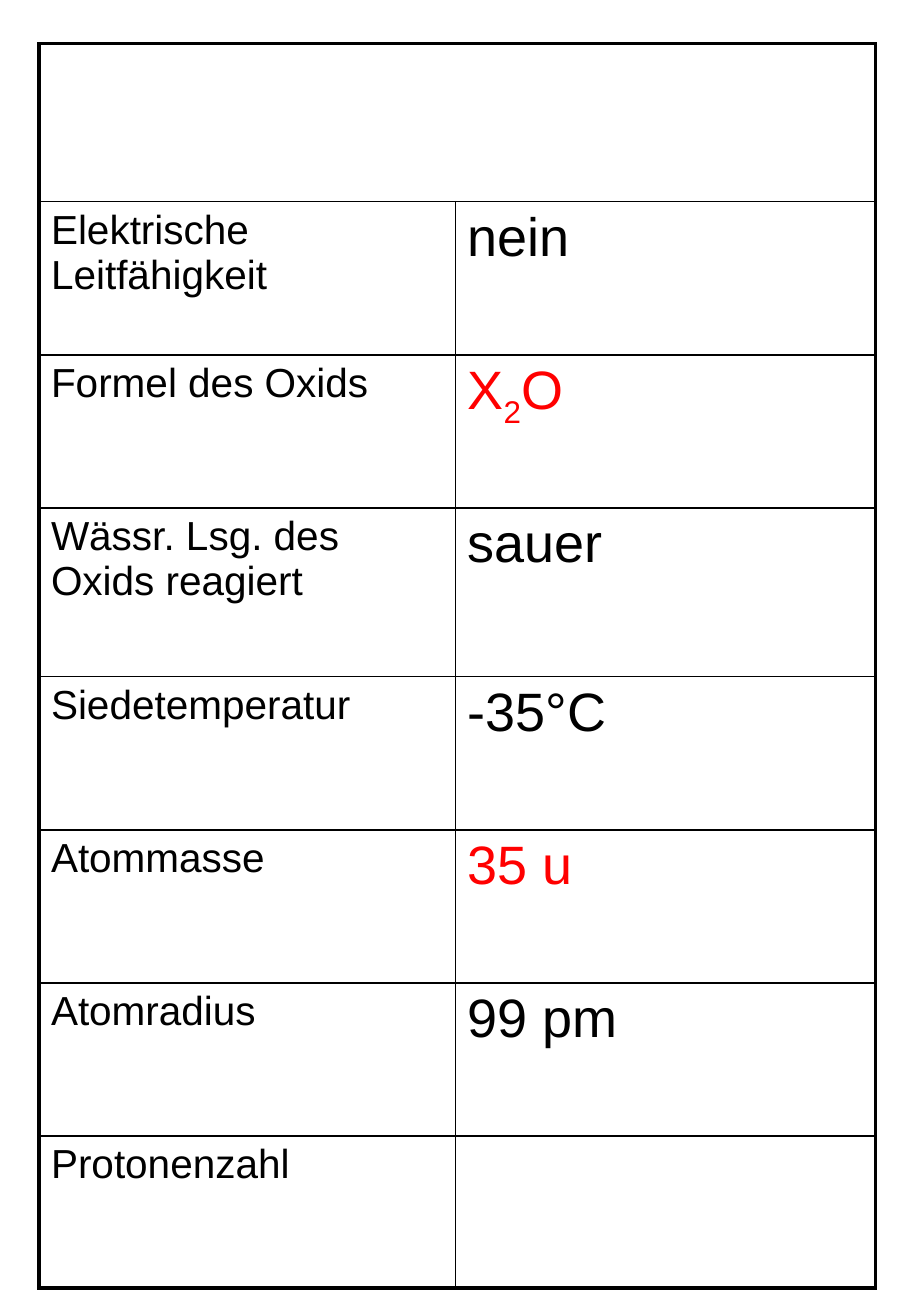
from dataclasses import dataclass

from lxml.etree import SubElement
from pptx import Presentation
from pptx.dml.color import RGBColor
from pptx.oxml.ns import qn
from pptx.util import Inches, Pt


@dataclass(frozen=True)
class Theme:
    font: str = "Arial"
    black: str = "000000"
    red: str = "FF0000"
    label_size: float = 24
    value_size: float = 32
    outer_line: float = 2.25
    inner_line: float = 1
    subscript: str = "-25000"


THEME = Theme()
COLUMN_WIDTHS = [3.43, 3.46]
ROW_HEIGHTS = [1.3, 1.26, 1.26, 1.39, 1.26, 1.26, 1.26, 1.25]
PROPERTIES = [
    ("Elektrische Leitfähigkeit", ["nein"], THEME.black),
    ("Formel des Oxids", ["X", "2", "O"], THEME.red),
    ("Wässr. Lsg. des Oxids reagiert", ["sauer"], THEME.black),
    ("Siedetemperatur", ["-35°C"], THEME.black),
    ("Atommasse", ["35 u"], THEME.red),
    ("Atomradius", ["99 pm"], THEME.black),
    ("Protonenzahl", [], THEME.black),
]


def add_border(cell, side, width):
    properties = cell._tc.get_or_add_tcPr()
    line = SubElement(properties, qn(f"a:ln{side}"), w=str(Pt(width)))
    fill = SubElement(line, qn("a:solidFill"))
    SubElement(fill, qn("a:srgbClr"), val=THEME.black)


def style_cell(cell, row, column):
    last_row, last_column = len(ROW_HEIGHTS) - 1, len(COLUMN_WIDTHS) - 1
    outer_sides = {
        "L": column == 0,
        "R": column == last_column or row == 0,
        "T": row == 0,
        "B": row == last_row,
    }
    for side, is_outer in outer_sides.items():
        add_border(cell, side, THEME.outer_line if is_outer else THEME.inner_line)
    cell.fill.background()


def write_cell(cell, parts, size, color):
    paragraph = cell.text_frame.paragraphs[0]
    paragraph.font.name = THEME.font
    paragraph.font.size = Pt(size)
    paragraph.font.color.rgb = RGBColor.from_string(color)
    for index, part in enumerate(parts):
        run = paragraph.add_run()
        run.text = part
        if index % 2:
            run._r.get_or_add_rPr().set("baseline", THEME.subscript)


def add_property_table(slide):
    frame = slide.shapes.add_table(
        len(ROW_HEIGHTS), len(COLUMN_WIDTHS), Inches(0.32), Inches(0.36),
        Inches(sum(COLUMN_WIDTHS)), Inches(sum(ROW_HEIGHTS)))
    table = frame.table
    table.first_row = False
    table.horz_banding = False
    for column, width in zip(table.columns, COLUMN_WIDTHS):
        column.width = Inches(width)
    for row, height in zip(table.rows, ROW_HEIGHTS):
        row.height = Inches(height)
    for row in range(len(ROW_HEIGHTS)):
        for column in range(len(COLUMN_WIDTHS)):
            style_cell(table.cell(row, column), row, column)
    table.cell(0, 0).merge(table.cell(0, 1))
    for row, (label, value, color) in enumerate(PROPERTIES, start=1):
        write_cell(table.cell(row, 0), [label], THEME.label_size, THEME.black)
        write_cell(table.cell(row, 1), value, THEME.value_size, color)


def main():
    presentation = Presentation()
    presentation.slide_width = Inches(7.5)
    presentation.slide_height = Inches(10.83)
    slide = presentation.slides.add_slide(presentation.slide_layouts[6])
    add_property_table(slide)
    presentation.save("out.pptx")


if __name__ == "__main__":
    main()
